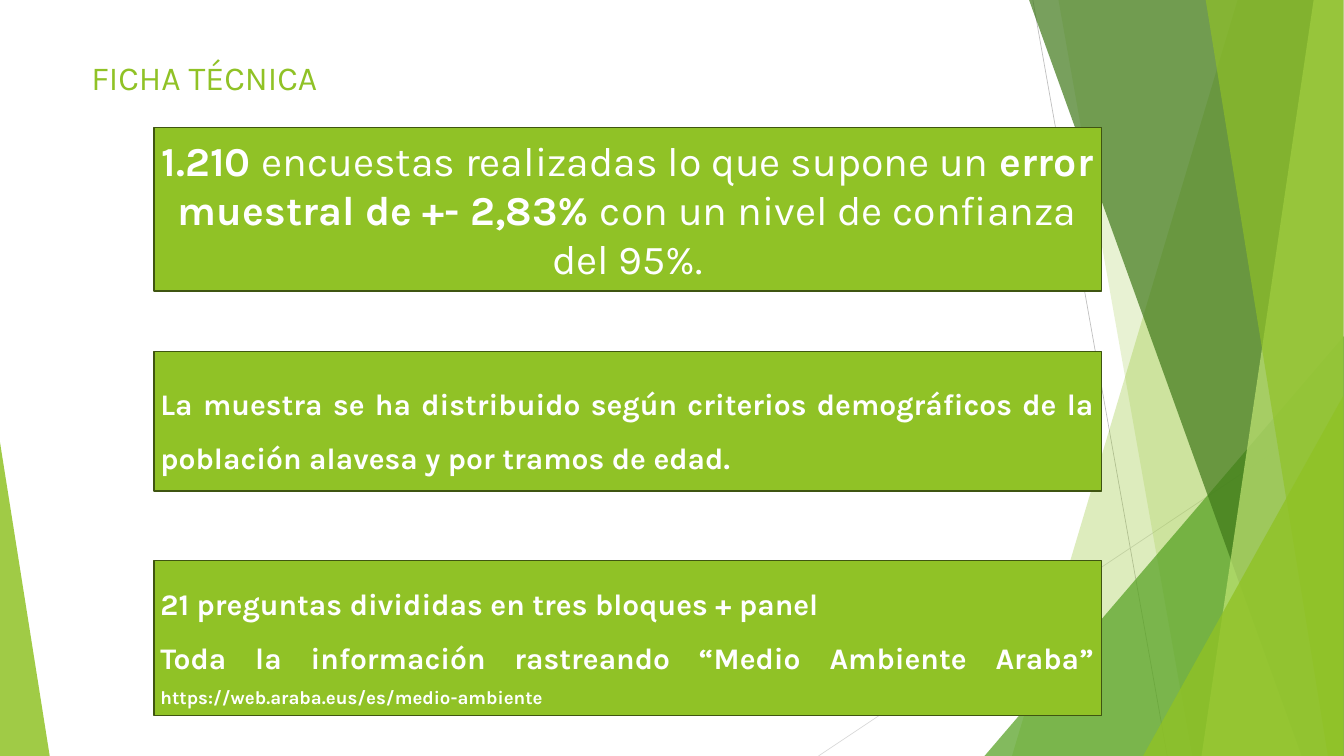
from typing import NamedTuple

from lxml.etree import SubElement
from pptx import Presentation
from pptx.dml.color import RGBColor
from pptx.enum.shapes import MSO_CONNECTOR, MSO_SHAPE
from pptx.enum.text import MSO_ANCHOR, MSO_AUTO_SIZE, PP_ALIGN
from pptx.oxml.ns import qn
from pptx.util import Inches, Pt

FONT = "Karla"
GREEN, EDGE, WHITE = "90C226", "3F5511", "FFFFFF"
WIDE, HIGH = 20, 11.25
RIGHT, TOP = 19.99, -0.01


class Ray(NamedTuple):
    start: tuple[float, float]
    end: tuple[float, float]
    color: str


class Band(NamedTuple):
    """A strip slanting from head to foot along its left side."""
    head: float
    foot: float
    color: str
    alpha: int


class Wedge(NamedTuple):
    left: float
    top: float
    width: float
    apex: float
    color: str
    alpha: int


class Part(NamedTuple):
    text: str
    size: int
    bold: bool = True


class Card(NamedTuple):
    top: float
    height: float
    align: PP_ALIGN
    gap: float
    paras: list[list[Part]]


RAYS = [
    Ray((15.37, 0), (17.37, HIGH), "BFBFBF"),
    Ray((RIGHT, 6.04), (12.18, HIGH), "D9D9D9"),
]

DECOR = [
    Band(18.42, 15.06, GREEN, 30),
    Band(15.75, 17.74, GREEN, 20),
    Wedge(14.65, 5, 5.35, 1, "54A021", 72),
    Band(15.31, 19.37, "3F7819", 70),
    Band(19.55, 17.88, "C0E474", 70),
    Band(17.94, 19.76, GREEN, 65),
    Wedge(17.01, 5.89, 2.98, 1, GREEN, 80),
    Wedge(0, 6.58, 0.74, 0, GREEN, 85),
]

CARDS = [
    Card(1.9, 2.43, PP_ALIGN.CENTER, 1, [[
        Part("1.210 ", 44),
        Part("encuestas realizadas lo que supone un ", 44, False),
        Part("error muestral de +- 2,83% ", 44),
        Part("con un nivel de confianza del 95%.", 44, False),
    ]]),
    Card(5.23, 2.08, PP_ALIGN.JUSTIFY, 1.5, [[
        Part("La muestra se ha distribuido según criterios demográficos "
             "de la población alavesa y por tramos de edad.", 32),
    ]]),
    Card(8.34, 2.31, PP_ALIGN.JUSTIFY, 1.5, [
        [Part("21 preguntas divididas en tres bloques + panel", 32)],
        [Part("Toda la información rastreando “Medio Ambiente Araba” ", 32),
         Part("https://web.araba.eus/es/medio-ambiente", 20)],
    ]),
]


def rgb(code: str) -> RGBColor:
    return RGBColor.from_string(code)


def paint(shape, color: str, alpha: int = 100) -> None:
    """Fill flat, with no line or shadow; alpha is in percent."""
    shape.shadow.inherit = False
    shape.line.fill.background()
    shape.fill.solid()
    shape.fill.fore_color.rgb = rgb(color)
    if alpha < 100:
        tint = shape.fill._xPr.find(".//" + qn("a:srgbClr"))
        SubElement(tint, qn("a:alpha"), val=str(alpha * 1000))


def write(para, part: Part, color: str) -> None:
    run = para.add_run()
    run.text = part.text
    font = run.font
    font.name, font.size, font.bold = FONT, Pt(part.size), part.bold
    font.color.rgb = rgb(color)


def draw_ray(shapes, ray: Ray) -> None:
    ends = [Inches(n) for n in ray.start + ray.end]
    line = shapes.add_connector(MSO_CONNECTOR.STRAIGHT, *ends)
    line.line.color.rgb = rgb(ray.color)
    line.line.width = Pt(0.75)
    SubElement(line._element.spPr, qn("a:effectLst"))


def draw_band(shapes, band: Band) -> None:
    pen = shapes.build_freeform(Inches(band.head), Inches(TOP))
    turns = [(RIGHT, TOP), (RIGHT, HIGH), (band.foot, HIGH)]
    pen.add_line_segments([(Inches(x), Inches(y)) for x, y in turns])
    paint(pen.convert_to_shape(), band.color, band.alpha)


def draw_wedge(shapes, wedge: Wedge) -> None:
    shape = shapes.add_shape(
        MSO_SHAPE.ISOSCELES_TRIANGLE, Inches(wedge.left), Inches(wedge.top),
        Inches(wedge.width), Inches(HIGH - wedge.top))
    shape.adjustments[0] = wedge.apex
    paint(shape, wedge.color, wedge.alpha)


def draw_card(shapes, card: Card) -> None:
    box = shapes.add_shape(
        MSO_SHAPE.RECTANGLE, Inches(2.29), Inches(card.top),
        Inches(14.1), Inches(card.height))
    paint(box, GREEN)
    box.line.color.rgb = rgb(EDGE)
    box.line.width = Pt(1.5)
    frame = box.text_frame
    frame.word_wrap = True
    frame.vertical_anchor = MSO_ANCHOR.MIDDLE
    for i, parts in enumerate(card.paras):
        para = frame.add_paragraph() if i else frame.paragraphs[0]
        para.alignment = card.align
        para.line_spacing = card.gap
        for part in parts:
            write(para, part, WHITE)


def set_title(title) -> None:
    title.left, title.top = Inches(1.26), Inches(0.76)
    title.width, title.height = Inches(14.1), Inches(0.87)
    frame = title.text_frame
    frame.word_wrap = True
    frame.auto_size = MSO_AUTO_SIZE.NONE
    frame.vertical_anchor = MSO_ANCHOR.TOP
    para = frame.paragraphs[0]
    para.alignment = PP_ALIGN.LEFT
    para.line_spacing = 1.07
    para.space_after = Pt(12)
    write(para, Part("FICHA TÉCNICA", 36, False), GREEN)


def main() -> None:
    deck = Presentation()
    deck.slide_width, deck.slide_height = Inches(WIDE), Inches(HIGH)
    slide = deck.slides.add_slide(deck.slide_layouts.get_by_name("Title Only"))
    shapes = slide.shapes
    set_title(shapes.title)
    for ray in RAYS:
        draw_ray(shapes, ray)
    for item in DECOR:
        if isinstance(item, Band):
            draw_band(shapes, item)
        else:
            draw_wedge(shapes, item)
    for card in CARDS:
        draw_card(shapes, card)
    deck.save("out.pptx")


if __name__ == "__main__":
    main()
